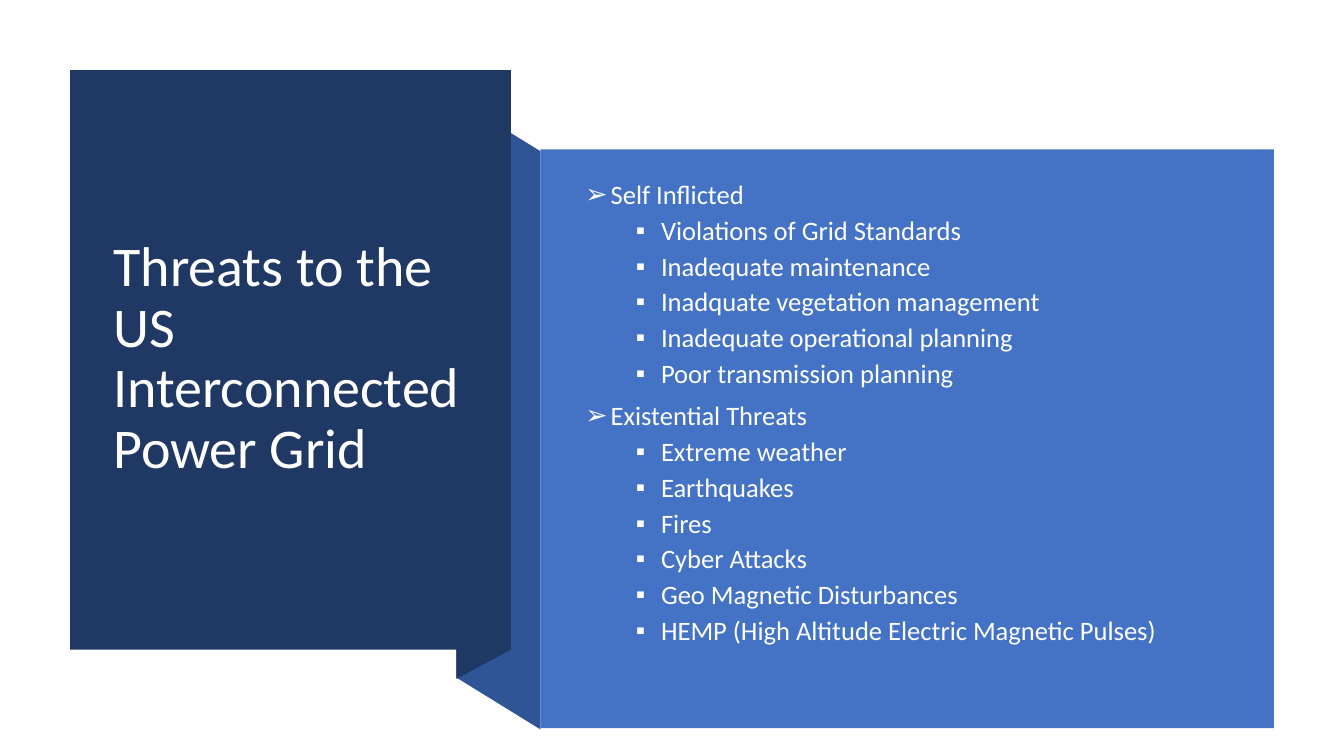
from dataclasses import dataclass

from lxml.etree import SubElement
from pptx import Presentation
from pptx.dml.color import RGBColor
from pptx.enum.shapes import MSO_SHAPE
from pptx.enum.text import MSO_ANCHOR, MSO_AUTO_SIZE, PP_ALIGN
from pptx.oxml.ns import qn
from pptx.util import Pt


@dataclass(frozen=True)
class Theme:
    font: str = "Calibri"
    title_size: int = 40
    list_size: int = 19
    navy: str = "203864"
    fold: str = "2F5597"
    panel: str = "4472C4"
    title_text: str = "FFFFFF"
    list_text: str = "FEFFFF"


THEME = Theme()
TITLE = "Threats to the US Interconnected Power Grid"
THREATS = {
    "Self Inflicted": [
        "Violations of Grid Standards",
        "Inadequate maintenance",
        "Inadquate vegetation management",
        "Inadequate operational planning",
        "Poor transmission planning",
    ],
    "Existential Threats": [
        "Extreme weather",
        "Earthquakes",
        "Fires",
        "Cyber Attacks",
        "Geo Magnetic Disturbances",
        "HEMP (High Altitude Electric Magnetic Pulses)",
    ],
}


def paint(shape, color):
    shape.shadow.inherit = False
    shape.fill.solid()
    shape.fill.fore_color.rgb = RGBColor.from_string(color)
    shape.line.fill.background()


def add_fold(slide, corners, color):
    builder = slide.shapes.build_freeform(*corners[0], scale=Pt(1))
    builder.add_line_segments(corners[1:], close=True)
    paint(builder.convert_to_shape(), color)


def add_panel(slide, left, top, width, height, color):
    panel = slide.shapes.add_shape(
        MSO_SHAPE.RECTANGLE, Pt(left), Pt(top), Pt(width), Pt(height))
    paint(panel, color)


def style_paragraph(paragraph, size, color):
    paragraph.alignment = PP_ALIGN.LEFT
    paragraph.line_spacing = 0.9
    paragraph.font.name = THEME.font
    paragraph.font.size = Pt(size)
    paragraph.font.color.rgb = RGBColor.from_string(color)


def place_title(slide):
    title = slide.shapes.title
    title.left, title.top = Pt(73.8), Pt(77.2)
    title.width, title.height = Pt(267.1), Pt(359.3)
    slide.shapes._spTree.append(title._element)
    frame = title.text_frame
    frame.text = TITLE
    frame.word_wrap = True
    frame.auto_size = MSO_AUTO_SIZE.NONE
    frame.vertical_anchor = MSO_ANCHOR.MIDDLE
    style_paragraph(frame.paragraphs[0], THEME.title_size, THEME.title_text)


def set_bullet(paragraph, mark, typeface, indent):
    properties = paragraph._p.get_or_add_pPr()
    properties.set("marL", str(Pt(indent)))
    properties.set("indent", str(Pt(-18)))
    SubElement(properties, qn("a:buFont")).set("typeface", typeface)
    SubElement(properties, qn("a:buChar")).set("char", mark)


def add_threat_list(slide):
    box = slide.shapes.add_textbox(Pt(411.1), Pt(135.4), Pt(468.7), Pt(341.3))
    frame = box.text_frame
    frame.word_wrap = True
    frame.vertical_anchor = MSO_ANCHOR.MIDDLE
    frame.margin_bottom = Pt(24.4)
    entries = []
    for cause, threats in THREATS.items():
        entries.append((cause, 0))
        entries.extend((threat, 1) for threat in threats)
    frame.text = "\n".join(text for text, level in entries)
    for paragraph, (text, level) in zip(frame.paragraphs, entries):
        paragraph.level = level
        paragraph.space_before = Pt(5 if level else 10)
        if level:
            set_bullet(paragraph, "▪", "Arial", 54)
        else:
            set_bullet(paragraph, "➢", "Arial", 18)
        style_paragraph(paragraph, THEME.list_size, THEME.list_text)


def main():
    deck = Presentation()
    deck.slide_width, deck.slide_height = Pt(960), Pt(540)
    slide = deck.slides.add_slide(deck.slide_layouts[5])
    add_fold(slide, [(386, 520.8), (326.2, 484), (326.2, 71.2), (386, 108)],
             THEME.fold)
    add_fold(slide, [(364.6, 464), (326.2, 484.6), (326.2, 70.4), (364.6, 49.8)],
             THEME.navy)
    add_panel(slide, 50, 50, 315, 414, THEME.navy)
    place_title(slide)
    add_panel(slide, 386, 106.8, 524, 413.3, THEME.panel)
    add_threat_list(slide)
    deck.save("out.pptx")


if __name__ == "__main__":
    main()
